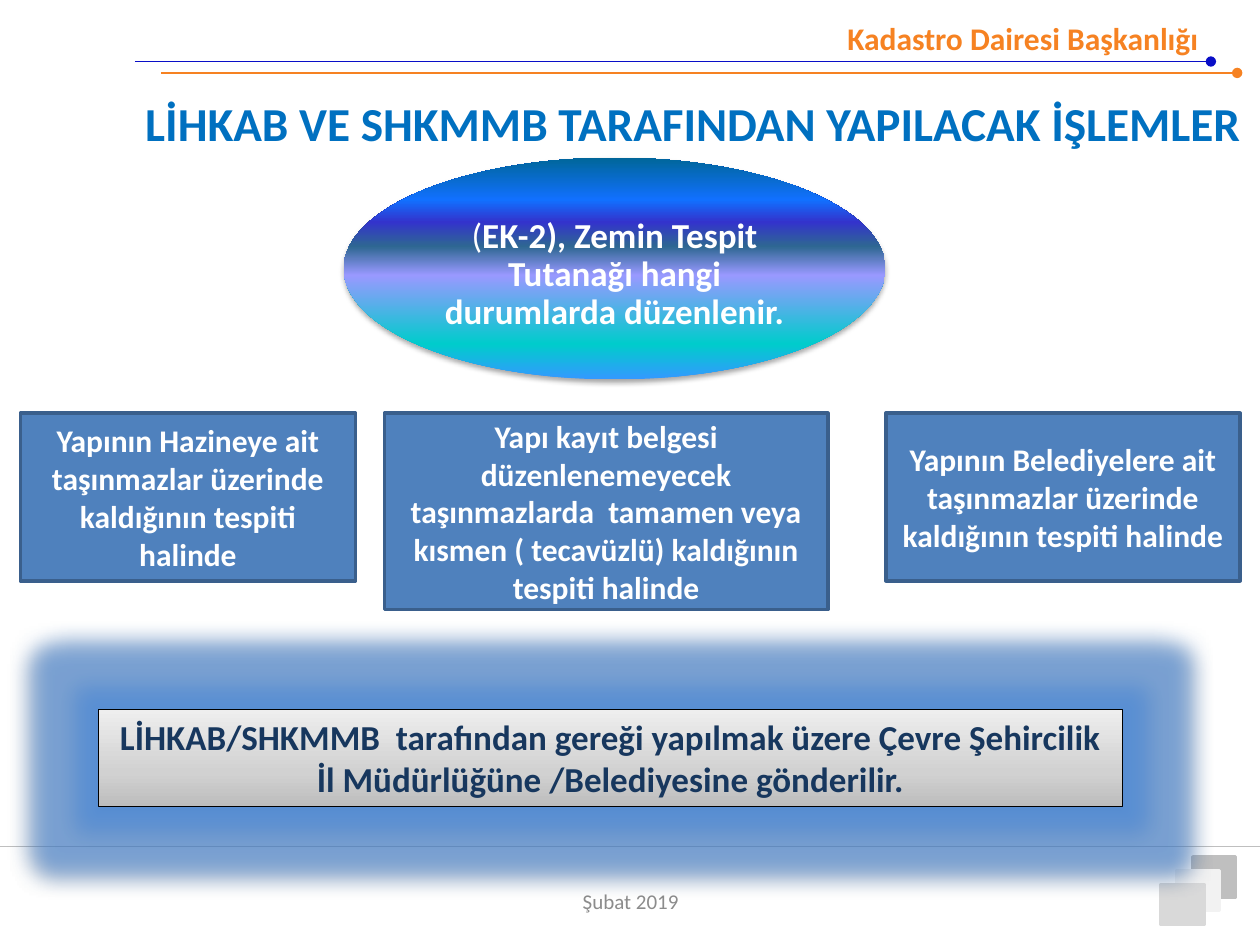
from lxml.etree import SubElement
from pptx import Presentation
from pptx.dml.color import RGBColor
from pptx.enum.shapes import MSO_CONNECTOR, MSO_SHAPE as Shape
from pptx.enum.text import MSO_ANCHOR as Anchor, PP_ALIGN as Align
from pptx.oxml import parse_xml
from pptx.oxml.ns import nsdecls, qn
from pptx.util import Cm, Pt

ORANGE = RGBColor(0xF6, 0x82, 0x22)
NAVY = RGBColor(0x09, 0x0E, 0xC7)
BLUE = RGBColor(0x4F, 0x81, 0xBD)
BLUE_EDGE = RGBColor(0x3A, 0x5F, 0x8C)
TITLE_BLUE = RGBColor(0x00, 0x70, 0xC0)
DARK_BLUE = RGBColor(0x17, 0x37, 0x5E)
WHITE = RGBColor(0xFF, 0xFF, 0xFF)
BLACK = RGBColor(0, 0, 0)
GREY = RGBColor(0x8C, 0x8C, 0x8C)
SILVER = RGBColor(0xBF, 0xBF, 0xBF)
PALE = RGBColor(0xF2, 0xF2, 0xF2)
LIGHT = RGBColor(0xD9, 0xD9, 0xD9)

TITLE = "LİHKAB VE SHKMMB TARAFINDAN YAPILACAK İŞLEMLER"
HEADING = "Kadastro Dairesi Başkanlığı"
DATE = "Şubat 2019"
QUESTION = ("(", "EK-2), Zemin Tespit Tutanağı hangi durumlarda düzenlenir.")
CASES = [
    (0.41, 6.76, 3.38, "Yapının Hazineye ait taşınmazlar üzerinde kaldığının tespiti halinde"),
    (17.86, 7.14, 3.38, "Yapının Belediyelere ait taşınmazlar üzerinde kaldığının tespiti halinde"),
    (7.75, 8.94, 3.96, "Yapı kayıt belgesi düzenlenemeyecek taşınmazlarda  tamamen veya "
                       "kısmen ( tecavüzlü) kaldığının tespiti halinde"),
]
RESULT = ("LİHKAB/SHKMMB  tarafından gereği yapılmak üzere Çevre Şehircilik "
          "İl Müdürlüğüne /Belediyesine gönderilir.")
HEADER_RULES = [(3.25, 1.47, ORANGE), (2.72, 1.24, NAVY)]
SQUARES = [SILVER, PALE, LIGHT]
OCEAN = [(0, "3399FF"), (16, "00CCCC"), (47, "9999FF"), (60, "2E6792"),
         (71, "3333CC"), (81, "1170FF"), (100, "006699")]
STEEL = [(0, "BDBDBD"), (35, "D1D1D1"), (100, "EEEEEE")]
GLOW = ('<a:glow rad="330200"><a:srgbClr val="4A8ADB">'
        '<a:alpha val="60000"/></a:srgbClr></a:glow>')


def write(shape, text, size, color, bold=True, align=Align.CENTER, anchor=Anchor.MIDDLE):
    frame = shape.text_frame
    frame.word_wrap = True
    frame.vertical_anchor = anchor
    para = frame.paragraphs[0]
    para.alignment = align
    for part in [text] if isinstance(text, str) else text:
        span = para.add_run()
        span.text = part
        span.font.name = "Calibri"
        span.font.size = Pt(size)
        span.font.bold = bold
        span.font.color.rgb = color
    return para


def add_box(page, kind, left, top, width, height, fill=None, line=None, weight=2):
    box = page.shapes.add_shape(kind, Cm(left), Cm(top), Cm(width), Cm(height))
    box.shadow.inherit = False
    if fill is not None:
        box.fill.solid()
        box.fill.fore_color.rgb = fill
    if line is None:
        box.line.fill.background()
    else:
        box.line.color.rgb = line
        box.line.width = Pt(weight)
    return box


def add_text(page, left, top, width, height):
    return page.shapes.add_textbox(Cm(left), Cm(top), Cm(width), Cm(height))


def add_rule(page, left, right, top, color, dotted=False):
    rule = page.shapes.add_connector(
        MSO_CONNECTOR.STRAIGHT, Cm(left), Cm(top), Cm(right), Cm(top))
    rule.line.color.rgb = color
    rule.line.width = Pt(0.75)
    if dotted:
        SubElement(rule.line._get_or_add_ln(), qn("a:tailEnd"), type="oval")
    SubElement(rule._element.spPr, qn("a:effectLst"))


def shade(box, stops, alpha, distance, glow=""):
    marks = "".join(f'<a:gs pos="{pos * 1000}"><a:srgbClr val="{color}"/></a:gs>'
                    for pos, color in stops)
    props = box._element.spPr
    props.find(qn("a:prstGeom")).addnext(parse_xml(
        f'<a:gradFill {nsdecls("a")}><a:gsLst>{marks}</a:gsLst>'
        '<a:lin ang="16200000" scaled="0"/></a:gradFill>'))
    effects = props.find(qn("a:effectLst"))
    props.replace(effects, parse_xml(
        f'<a:effectLst {nsdecls("a")}>{glow}'
        f'<a:outerShdw blurRad="{Pt(3.1)}" dist="{Pt(distance)}" dir="5400000" rotWithShape="0">'
        f'<a:srgbClr val="000000"><a:alpha val="{alpha * 1000}"/></a:srgbClr>'
        '</a:outerShdw></a:effectLst>'))


deck = Presentation()
deck.slide_width, deck.slide_height = Cm(25.4), Cm(19.05)
page = deck.slides.add_slide(deck.slide_layouts[5])

title = page.shapes.title
title.left, title.top, title.width, title.height = Cm(2.54), Cm(1.4), Cm(22.86), Cm(3.18)
title.text_frame.margin_bottom = Cm(1.17)
write(title, TITLE, 27, TITLE_BLUE)

add_rule(page, 0, 25.4, 17.07, SILVER)
for index, color in enumerate(SQUARES):
    add_box(page, Shape.RECTANGLE, 24.05 - 0.32 * index, 17.27 + 0.28 * index,
            0.86, 0.81, color, color)
for left, top, color in HEADER_RULES:
    add_rule(page, left, left + 21.69, top, color, dotted=True)
write(add_text(page, 16.28, 0.25, 8.13, 1.02), HEADING, 18, ORANGE,
      align=Align.RIGHT, anchor=Anchor.TOP)
write(add_text(page, 8.69, 17.65, 8.05, 1.02), DATE, 12, GREY, bold=False)

shade(add_box(page, Shape.OVAL, 6.93, 3.18, 10.92, 4.47), OCEAN, 35, 1.8)
question = add_text(page, 8.53, 3.96, 7.72, 3.18)
frame = question.text_frame
frame.margin_left = frame.margin_right = frame.margin_top = frame.margin_bottom = Cm(0.05)
para = write(question, QUESTION, 20, WHITE)
para.line_spacing = 0.9
para.runs[0].font.bold = False

for left, width, height, text in CASES:
    write(add_box(page, Shape.RECTANGLE, left, 8.33, width, height, BLUE, BLUE_EDGE),
          text, 18, WHITE)

result = add_box(page, Shape.RECTANGLE, 1.98, 14.3, 20.65, 1.96, line=BLACK, weight=0.75)
shade(result, STEEL, 38, 1.6, GLOW)
write(result, RESULT, 20, DARK_BLUE, anchor=Anchor.TOP)

deck.save("out.pptx")
